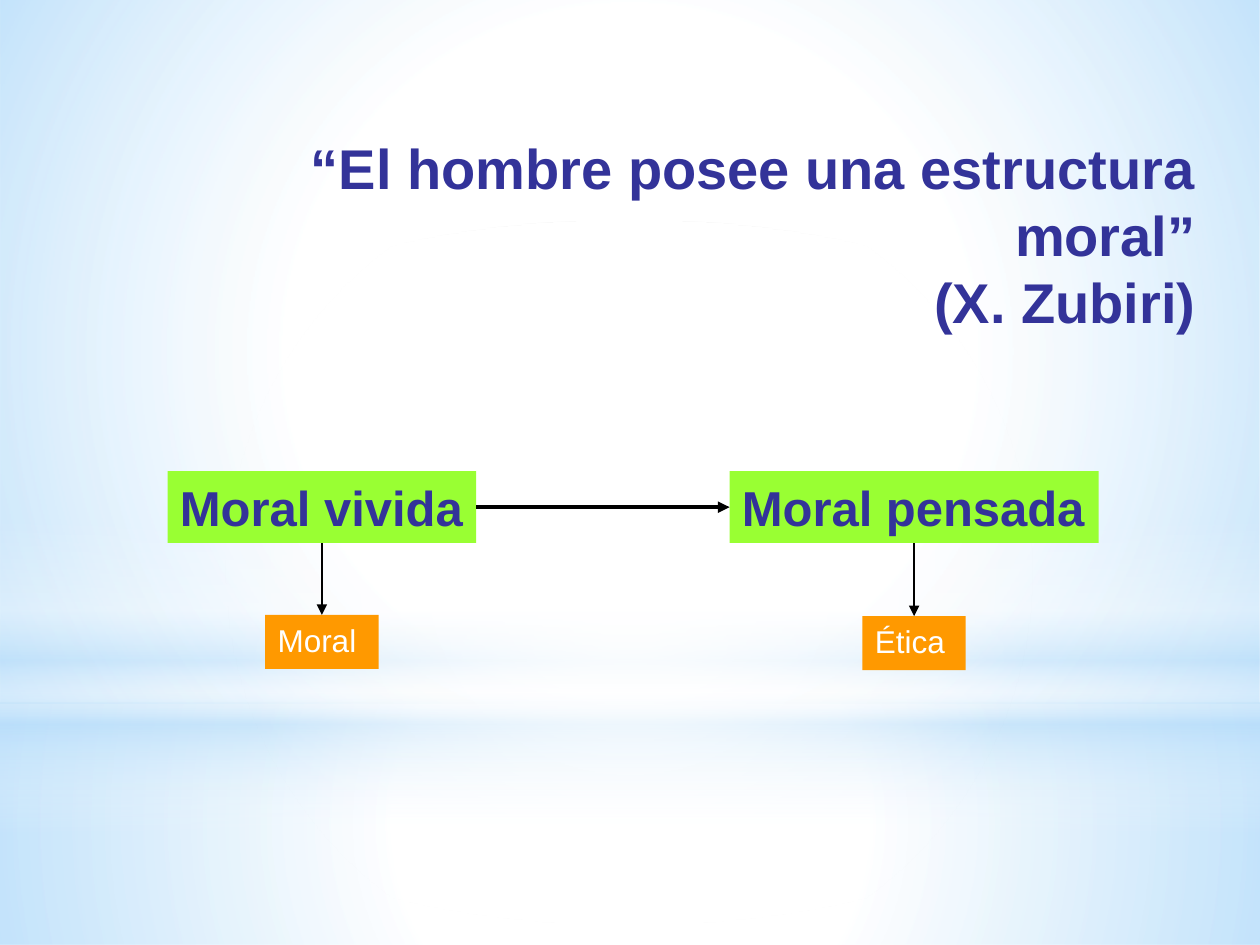
from dataclasses import dataclass

from lxml import etree
from pptx import Presentation
from pptx.dml.color import RGBColor
from pptx.enum.shapes import MSO_CONNECTOR, MSO_SHAPE
from pptx.enum.text import MSO_ANCHOR, MSO_AUTO_SIZE, PP_ALIGN
from pptx.oxml import parse_xml
from pptx.oxml.ns import nsdecls, qn
from pptx.util import Inches, Pt

RECT, OVAL = MSO_SHAPE.RECTANGLE, MSO_SHAPE.OVAL
STRAIGHT = MSO_CONNECTOR.STRAIGHT
TOP, LEFT, BOTTOM, RIGHT = range(4)
TITLE_ONLY = 5
COLS, ROWS = 100, 75


@dataclass(frozen=True)
class Theme:
    font: str = "Arial"
    ink: str = "333399"
    concept: str = "99FF33"
    term: str = "FF9900"
    white: str = "FFFFFF"
    sky: str = "B4DCFA"
    line: str = "000000"
    title_size: int = 32
    concept_size: int = 28
    term_size: int = 18


class SlideBuilder:
    """Places elements on a grid of COLS by ROWS cells."""

    def __init__(self, prs, theme):
        self.theme = theme
        self.col, self.row = prs.slide_width / COLS, prs.slide_height / ROWS
        self.s = prs.slides.add_slide(prs.slide_layouts[TITLE_ONLY])

    def place(self, x, y, w, h):
        return [round(n * unit) for n, unit in
                zip((x, y, w, h), (self.col, self.row) * 2)]

    def shape(self, kind, box):
        sp = self.s.shapes.add_shape(kind, *self.place(*box))
        sp.shadow.inherit = False
        sp.line.fill.background()
        return sp

    def set_text(self, tf, lines, size, color, bold=False, align=PP_ALIGN.LEFT):
        frame = dict(word_wrap=True, auto_size=MSO_AUTO_SIZE.NONE,
                     vertical_anchor=MSO_ANCHOR.TOP)
        for name, value in frame.items():
            setattr(tf, name, value)
        tf.text = "\n".join(lines)
        for p in tf.paragraphs:
            p.alignment = align
            font = p.runs[0].font
            for name, value in dict(name=self.theme.font, size=Pt(size), bold=bold).items():
                setattr(font, name, value)
            font.color.rgb = RGBColor.from_string(color)

    def glow(self, kind, box, stops, linear=False):
        """Adds a shape with a gradient of (position, colour, opacity) stops."""
        sp = self.shape(kind, box)
        marks = "".join(
            f'<a:gs pos="{pos * 1000}"><a:srgbClr val="{color}">'
            f'<a:alpha val="{alpha * 1000}"/></a:srgbClr></a:gs>'
            for pos, color, alpha in stops)
        direction = ('<a:lin ang="5400000" scaled="0"/>' if linear else
                     '<a:path path="circle"><a:fillToRect l="50000" t="50000" '
                     'r="50000" b="50000"/></a:path>')
        sp._element.spPr.find(qn("a:prstGeom")).addnext(parse_xml(
            f'<a:gradFill {nsdecls("a")} rotWithShape="1"><a:gsLst>{marks}</a:gsLst>'
            f'{direction}</a:gradFill>'))

    def title(self, box, lines):
        sp = self.s.shapes.title
        sp.left, sp.top, sp.width, sp.height = self.place(*box)
        self.set_text(sp.text_frame, lines, self.theme.title_size, self.theme.ink,
                      bold=True, align=PP_ALIGN.RIGHT)
        # Bring the title in front of the backdrop
        self.s.shapes._spTree.append(sp._element)

    def label(self, box, text, fill, size, color, bold=False):
        sp = self.shape(RECT, box)
        sp.fill.solid()
        sp.fill.fore_color.rgb = RGBColor.from_string(fill)
        self.set_text(sp.text_frame, [text], size, color, bold)
        sp.text_frame.margin_right = 0
        return sp

    def arrow(self, start, start_side, end, end_side, width):
        c = self.s.shapes.add_connector(STRAIGHT, 0, 0, 0, 0)
        c.begin_connect(start, start_side)
        c.end_connect(end, end_side)
        c.line.color.rgb = RGBColor.from_string(self.theme.line)
        c.line.width = Pt(width)
        etree.SubElement(c.line._get_or_add_ln(), qn("a:tailEnd"), type="triangle")
        etree.SubElement(c._element.spPr, qn("a:effectLst"))


def main():
    prs = Presentation()
    prs.slide_width, prs.slide_height = Inches(10), Inches(7.5)
    theme = Theme()
    b = SlideBuilder(prs, theme)
    white, sky = theme.white, theme.sky

    # Backdrop: floor, sky, horizon band and central light
    horizon = 55.8
    b.glow(RECT, (0, horizon, COLS, ROWS - horizon),
           [(0, white, 91), (37, white, 76), (100, sky, 79)])
    b.glow(RECT, (0, 0, COLS, horizon),
           [(0, white, 89), (48, white, 62), (100, sky, 79)])
    b.glow(RECT, (0, 41.2, COLS, 25),
           [(0, white, 0), (29, white, 30), (45, sky, 40),
            (55, white, 26), (65, sky, 60), (100, white, 0)], linear=True)
    b.glow(OVAL, (0, 17.5, COLS, horizon), [(0, white, 100), (56, white, 0)])

    # Quotation
    b.title((10, 10.1, 85.9, 17),
            ["“El hombre posee una estructura moral”", "(X. Zubiri)"])

    # Each concept with its term centred below
    pairs = [("Moral vivida", 13.3, 24.5, "Moral", 9, 48.8),
             ("Moral pensada", 57.9, 29.3, "Ética", 8.2, 48.9)]
    concepts = []
    for concept, x, w, term, term_w, term_y in pairs:
        parent = b.label((x, 37.4, w, 5.7), concept, theme.concept,
                         theme.concept_size, theme.ink, bold=True)
        child = b.label((x + (w - term_w) / 2, term_y, term_w, 4.3), term,
                        theme.term, theme.term_size, white)
        b.arrow(parent, BOTTOM, child, TOP, 0.75)
        concepts.append(parent)

    # Lived morality leads to reflected morality
    lived, reflected = concepts
    b.arrow(lived, RIGHT, reflected, LEFT, 2.25)

    prs.save("out.pptx")


if __name__ == "__main__":
    main()
